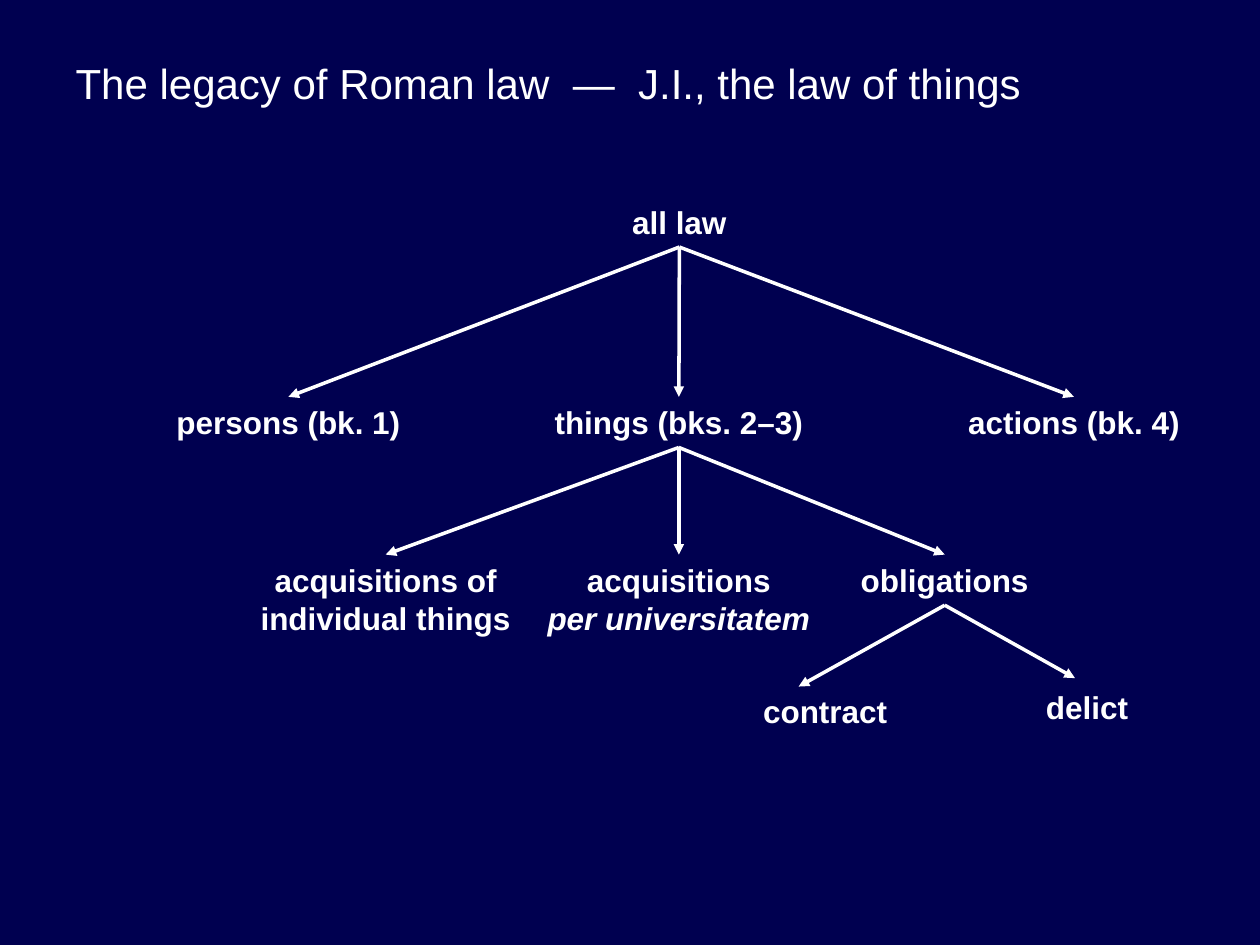
from dataclasses import dataclass

from lxml import etree
from pptx import Presentation, util as u
from pptx.dml.color import RGBColor
from pptx.enum import shapes, text
from pptx.oxml import ns


@dataclass(frozen=True)
class Theme:
    font: str = "Arial"
    ink: RGBColor = RGBColor(0xFF, 0xFF, 0xFF)
    ground: RGBColor = RGBColor(0x00, 0x00, 0x50)
    title_size: float = 24
    label_size: float = 18
    line_width: float = 2


class TreeSlide:
    """Draws a titled tree of labels and arrows in one style."""

    def __init__(self, deck, theme):
        self.theme = theme
        self.page = deck.slides.add_slide(deck.slide_layouts[5])
        fill = self.page.background.fill
        fill.solid()
        fill.fore_color.rgb = theme.ground

    def set_words(self, box, spans, align, **formats):
        frame = box.text_frame
        settings = {"word_wrap": True, "vertical_anchor": text.MSO_ANCHOR.TOP}
        for name, value in settings.items():
            setattr(frame, name, value)
        para = frame.paragraphs[0]
        para.alignment = align
        for words, extra, tracking in spans:
            span = para.add_run()
            span.text = words
            values = {"name": self.theme.font, **formats, **extra}
            for name, value in values.items():
                setattr(span.font, name, value)
            span.font.color.rgb = self.theme.ink
            if tracking:
                span._r.get_or_add_rPr().set("spc", str(tracking))

    def title(self, spans, left, top, width, height):
        box = self.page.shapes.title
        place = {"left": left, "top": top, "width": width, "height": height}
        for name, value in place.items():
            setattr(box, name, u.Cm(value))
        box.text_frame.auto_size = text.MSO_AUTO_SIZE.NONE
        self.set_words(box, spans, text.PP_ALIGN.LEFT,
                       size=u.Pt(self.theme.title_size), bold=False)

    def label(self, spans, left, top, width, height):
        place = [u.Cm(value) for value in (left, top, width, height)]
        box = self.page.shapes.add_textbox(*place)
        box.text_frame.auto_size = text.MSO_AUTO_SIZE.SHAPE_TO_FIT_TEXT
        self.set_words(box, spans, text.PP_ALIGN.CENTER,
                       size=u.Pt(self.theme.label_size), bold=True)

    def arrow(self, tip, tail):
        ends = [u.Cm(value) for value in (*tip, *tail)]
        arrow = self.page.shapes.add_connector(shapes.MSO_CONNECTOR.STRAIGHT, *ends)
        arrow.line.color.rgb = self.theme.ink
        arrow.line.width = u.Pt(self.theme.line_width)
        etree.SubElement(arrow.line._get_or_add_ln(), ns.qn("a:headEnd"), type="triangle")
        etree.SubElement(arrow._element.spPr, ns.qn("a:effectLst"))


def plain(words):
    return [(words, {}, 0)]


LINE, TWO_LINES = 1.02, 1.8
BOOKS_TOP, KINDS_TOP, WIDTH = 8, 11.18, 5.89
WIDE_SPACE = (" ", {}, 667)

TITLE = [
    ("The legacy of Roman law", {}, 0), WIDE_SPACE,
    ("—", {}, 0), WIDE_SPACE,
    ("J.I., the law of things", {}, 0),
]

LABELS = {
    "law": (plain("all law"), 10.01, 3.96, 7.37, LINE),
    "persons": (plain("persons (bk. 1)"), 1.98, BOOKS_TOP, 7.67, LINE),
    "things": (plain("things (bks. 2–3)"), 10.74, BOOKS_TOP, WIDTH, LINE),
    "actions": (plain("actions (bk. 4)"), 18.16, BOOKS_TOP, 6.98, LINE),
    "individual": (plain("acquisitions of individual things"), 4.83, KINDS_TOP, WIDTH, TWO_LINES),
    "universal": (
        [("acquisitions", {}, 0), (" ", {}, 1500), ("per universitatem", {"italic": True}, 0)],
        10.74, KINDS_TOP, WIDTH, TWO_LINES,
    ),
    "obligations": (plain("obligations"), 16.1, KINDS_TOP, WIDTH, LINE),
    "contract": (plain("contract"), 13.69, 13.82, WIDTH, LINE),
    "delict": (plain("delict"), 18.97, 13.74, WIDTH, LINE),
}

BRANCHES = {
    "law": ("persons", "things", "actions"),
    "things": ("individual", "universal", "obligations"),
    "obligations": ("contract", "delict"),
}

SHIFTED_TIPS = {"contract": (16.1, 13.84), "delict": (21.67, 13.67)}


def top_centre(name):
    _, left, top, width, _ = LABELS[name]
    return left + width / 2, top


def bottom_centre(name):
    centre, top = top_centre(name)
    return centre, top + LABELS[name][-1]


def main():
    deck = Presentation()
    deck.slide_width, deck.slide_height = u.Cm(25.4), u.Cm(19.05)
    tree = TreeSlide(deck, Theme())
    tree.title(TITLE, 1.27, 1.04, 22.86, 1.9)
    for label in LABELS.values():
        tree.label(*label)
    for parent, children in BRANCHES.items():
        for child in children:
            tip = SHIFTED_TIPS.get(child, top_centre(child))
            tree.arrow(tip, bottom_centre(parent))
    deck.save("out.pptx")


if __name__ == "__main__":
    main()
